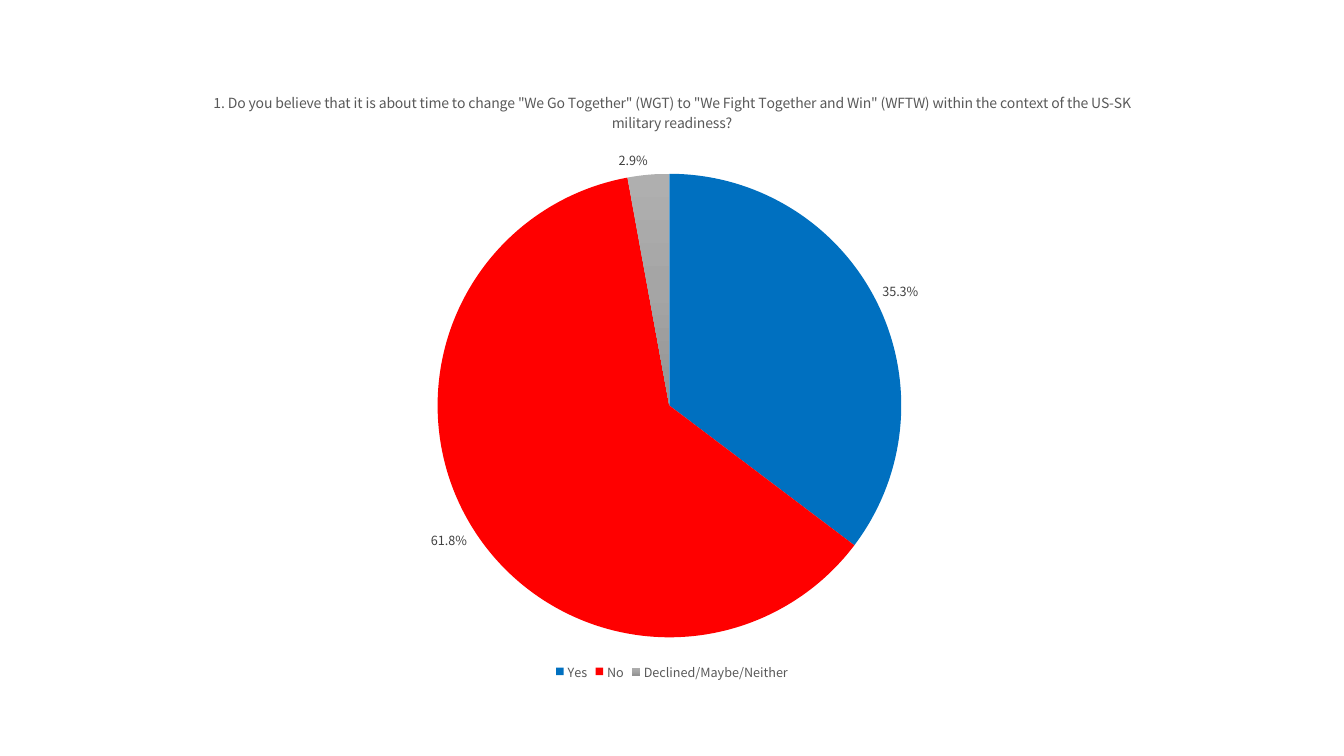
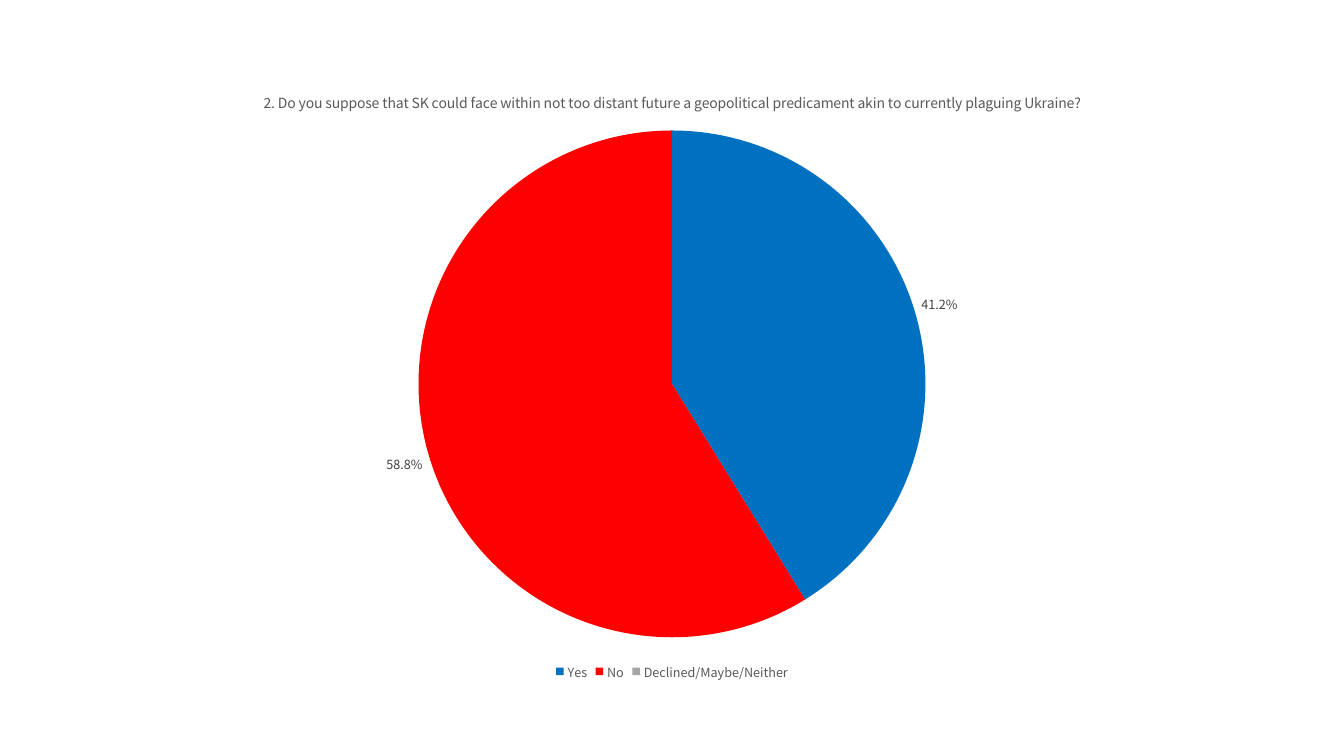
from pptx import Presentation
from pptx.chart.data import CategoryChartData
from pptx.dml.color import RGBColor
from pptx.enum.chart import XL_CHART_TYPE, XL_LABEL_POSITION, XL_LEGEND_POSITION
from pptx.oxml import parse_xml
from pptx.oxml.ns import nsdecls
from pptx.util import Inches, Pt

PIE = XL_CHART_TYPE.PIE
OUT = XL_LABEL_POSITION.OUTSIDE_END
LOW = XL_LEGEND_POSITION.BOTTOM
FACE = "Noto Sans CJK KR"
PCT = "0.0%"
HEX = {"Yes": "0070C0", "No": "FF0000", "Declined/Maybe/Neither": "A5A5A5",
       "base": "000000", "text": "595959", "label": "404040"}
FADE = {0: "AFAFAF", 50: "A5A5A5", 100: "939393"}
CATS = ["Yes", "No", "Declined/Maybe/Neither"]
POLLS = [
    ('1. Do you believe that it is about time to change "We Go Together" (WGT) to '
     '"We Fight Together and Win" (WFTW) within the context of the US-SK military readiness?',
     (0.353, 0.618, 0.029)),
    ("2. Do you suppose that SK could face within not too distant future "
     "a geopolitical predicament akin to currently plaguing Ukraine?",
     (0.412, 0.588, 0)),
]


def style(font, size, tone):
    form = {"name": FACE, "size": Pt(size), "bold": False}
    for key, val in form.items():
        setattr(font, key, val)
    font.color.rgb = RGBColor.from_string(HEX[tone])


deck = Presentation()
deck.slide_width, deck.slide_height = Inches(13.33), Inches(7.5)
left = top = Inches(0.7)
wide = deck.slide_width - 2 * left
high = Inches(6.09)

for ask, vals in POLLS:
    slide = deck.slides.add_slide(deck.slide_layouts[6])
    data = CategoryChartData(number_format=PCT)
    data.categories = CATS
    data.add_series(ask, vals)
    chart = slide.shapes.add_chart(PIE, left, top, wide, high, data).chart
    style(chart.font, 10, "base")

    chart.has_title = True
    chart.chart_title.include_in_layout = False
    head = chart.chart_title.text_frame
    head.text = ask
    style(head.paragraphs[0].runs[0].font, 10, "text")

    chart.has_legend = True
    chart.legend.position = LOW
    chart.legend.include_in_layout = False
    style(chart.legend.font, 9, "text")

    plot = chart.plots[0]
    plot.vary_by_categories = True
    plot.has_data_labels = True
    tags = plot.series[0].data_labels
    form = {"show_value": True, "show_percentage": False, "position": OUT,
            "number_format": PCT, "number_format_is_linked": False}
    for key, val in form.items():
        setattr(tags, key, val)
    style(tags.font, 9, "label")

    pie = plot.series[0]
    for num, (cat, val) in enumerate(zip(CATS, vals)):
        part = pie.points[num].format
        part.fill.solid()
        part.fill.fore_color.rgb = RGBColor.from_string(HEX[cat])
        part.line.fill.background()
        if not val:
            tags._element.insert(0, parse_xml(
                f'<c:dLbl {nsdecls("c")}><c:idx val="{num}"/><c:delete val="1"/></c:dLbl>'))

    if vals[-1]:
        stops = "".join(f'<a:gs pos="{pos * 1000}"><a:srgbClr val="{tone}"/></a:gs>'
                        for pos, tone in FADE.items())
        fade = parse_xml(f'<a:gradFill {nsdecls("a")}><a:gsLst>{stops}</a:gsLst>'
                         '<a:lin ang="5400000" scaled="0"/></a:gradFill>')
        flat = pie._element.xpath("c:dPt[c:idx/@val='2']/c:spPr/a:solidFill")[0]
        flat.getparent().replace(flat, fade)

deck.save("out.pptx")
